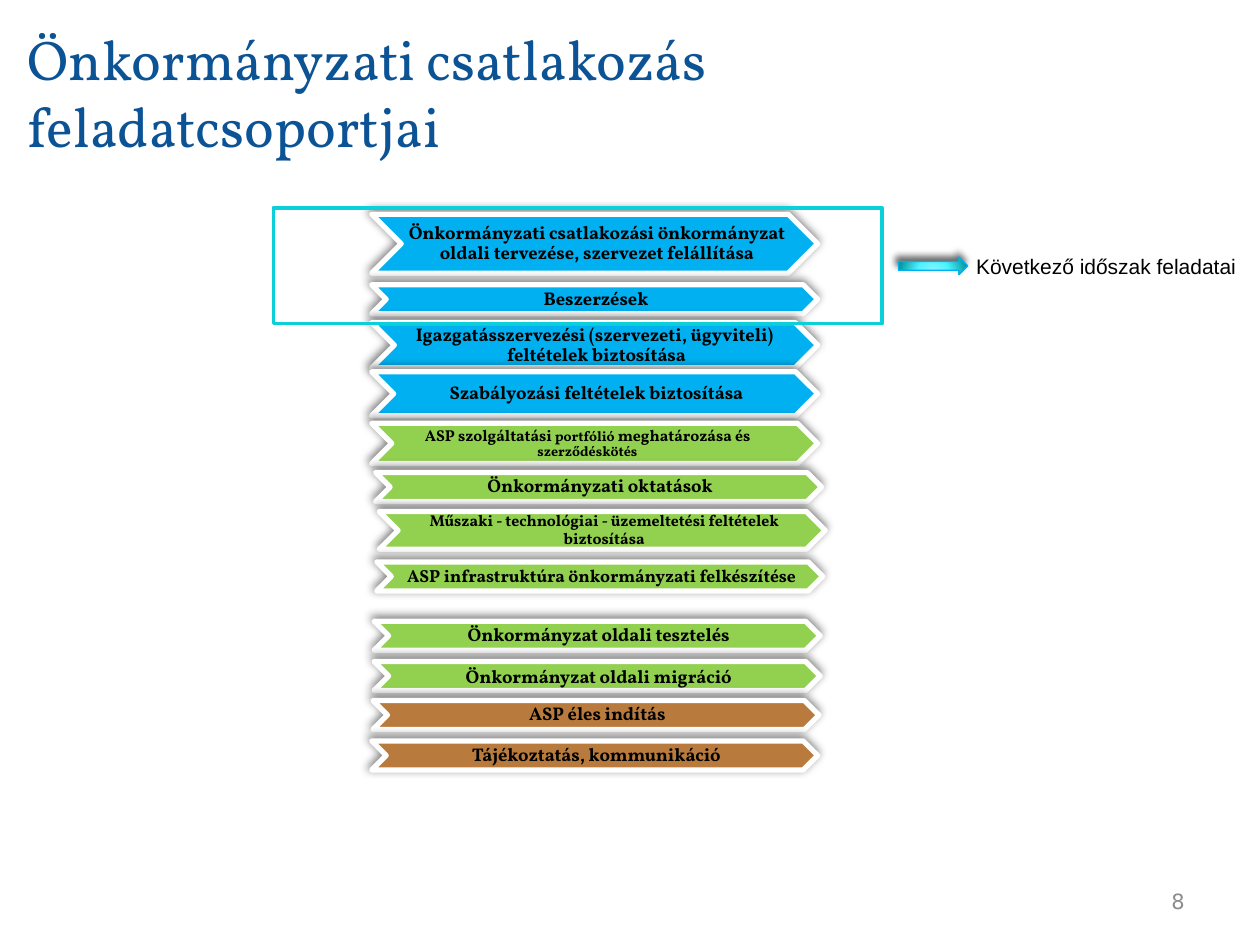
from dataclasses import dataclass

from lxml.etree import SubElement
from pptx import Presentation
from pptx.dml.color import RGBColor
from pptx.enum.shapes import MSO_SHAPE
from pptx.enum.text import MSO_ANCHOR, MSO_AUTO_SIZE, PP_ALIGN
from pptx.oxml import parse_xml
from pptx.oxml.ns import nsdecls, qn
from pptx.util import Pt

BLACK = RGBColor(0x00, 0x00, 0x00)
WHITE = RGBColor(0xFF, 0xFF, 0xFF)
GREY = RGBColor(0x8C, 0x8C, 0x8C)
NAVY = RGBColor(0x0B, 0x53, 0x94)
BLUE = RGBColor(0x00, 0xB0, 0xF0)
GREEN = RGBColor(0x92, 0xD0, 0x50)
BROWN = RGBColor(0xB9, 0x7B, 0x3D)
TURQUOISE = RGBColor(0x0B, 0xD0, 0xD9)

SERIF = "Vollkorn"
CHEVRON_WIDTH = 254.9
ARROW_STOPS = ((0, "99F4FC"), (46, "4DF3FF"), (100, "009299"))


@dataclass
class Task:
    """One chevron; runs pair a text with its size, indent and drop shift its label."""
    left: float
    top: float
    height: float
    color: RGBColor
    runs: list[tuple[str, float]]
    indent: float = 10
    label_width: float = 235.4
    drop: float = 0


TASKS = [
    Task(212.4, 122.4, 33.8, BLUE,
         [("Önkormányzati csatlakozási önkormányzat oldali tervezése, "
           "szervezet felállítása", 10.5)], 15.8, 224.6),
    Task(212.4, 162.7, 16.6, BLUE, [("Beszerzések", 10.5)], 9.4, 236.2),
    Task(212.4, 184.3, 25.9, BLUE,
         [("Igazgatásszervezési (szervezeti, ügyviteli) \n"
           "feltételek biztosítása", 10.5)], 15.1, 225.4),
    Task(212.4, 212.4, 25.2, BLUE,
         [("Szabályozási feltételek biztosítása", 10.5)], 15.1, 225.4),
    Task(212.4, 241.9, 23, GREEN,
         [("ASP szolgáltatási ", 9), ("portfólió", 8),
          (" meghatározása és ", 9), ("szerződéskötés", 8)], 5),
    Task(214.6, 270, 16.6, GREEN, [("Önkormányzati oktatások", 10.5)]),
    Task(216.7, 292.3, 21.6, GREEN,
         [("Műszaki - technológiai - üzemeltetési feltételek biztosítása", 9)],
         13, 229.7),
    Task(215.3, 321.1, 16.6, GREEN,
         [("ASP infrastruktúra önkormányzati felkészítése", 10)]),
    Task(213.8, 355, 16.6, GREEN, [("Önkormányzat oldali tesztelés", 10.5)]),
    Task(213.8, 378, 16.6, GREEN, [("Önkormányzat oldali migráció", 10.5)], drop=0.7),
    Task(213.1, 400.3, 16.6, BROWN, [("ASP éles indítás", 10.5)]),
    Task(212.4, 423.4, 16.6, BROWN, [("Tájékoztatás, kommunikáció", 10.5)]),
]


def add_run(p, text: str, font: str, size: float, color: RGBColor, bold: bool = False):
    for i, line in enumerate(text.split("\n")):
        if i:
            p.add_line_break()
        r = p.add_run()
        r.text = line
        r.font.name, r.font.size, r.font.bold = font, Pt(size), bold
        r.font.color.rgb = color


def add_textbox(shapes, left: float, top: float, width: float, height: float,
                align: PP_ALIGN, anchor: MSO_ANCHOR = MSO_ANCHOR.MIDDLE):
    tf = shapes.add_textbox(Pt(left), Pt(top), Pt(width), Pt(height)).text_frame
    tf.word_wrap = True
    tf.vertical_anchor = anchor
    tf.paragraphs[0].alignment = align
    return tf


def add_outlined(shapes, kind: MSO_SHAPE, left: float, top: float, width: float,
                 height: float, color: RGBColor, weight: float):
    sp = shapes.add_shape(kind, Pt(left), Pt(top), Pt(width), Pt(height))
    sp.shadow.inherit = False
    sp.line.color.rgb = color
    sp.line.width = Pt(weight)
    return sp


def cast_shadow(sp, opacity: int, blur: float, distance: float):
    effects = sp._element.spPr.find(qn("a:effectLst"))
    shadow = SubElement(effects, qn("a:outerShdw"), blurRad=str(Pt(blur)),
                        dist=str(Pt(distance)), dir=str(245 * 60000),
                        algn="ctr", rotWithShape="0")
    color = SubElement(shadow, qn("a:srgbClr"), val=str(BLACK))
    SubElement(color, qn("a:alpha"), val=str(opacity * 1000))


def fill_radial(sp, stops: tuple):
    stop_xml = "".join(f'<a:gs pos="{pos * 1000}"><a:srgbClr val="{color}"/></a:gs>'
                       for pos, color in stops)
    gradient = parse_xml(
        f'<a:gradFill {nsdecls("a")} rotWithShape="1"><a:gsLst>{stop_xml}</a:gsLst>'
        '<a:path path="circle"><a:fillToRect l="50000" t="155000" r="50000" b="-55000"/>'
        '</a:path></a:gradFill>')
    sp._element.spPr.find(qn("a:prstGeom")).addnext(gradient)


def draw_task(s, task: Task):
    shapes = s.shapes.add_group_shape().shapes
    sp = add_outlined(shapes, MSO_SHAPE.CHEVRON, task.left, task.top,
                      CHEVRON_WIDTH, task.height, WHITE, 3)
    sp.fill.solid()
    sp.fill.fore_color.rgb = task.color
    cast_shadow(sp, 50, 5, 2)

    tf = add_textbox(shapes, task.left + task.indent, task.top + task.drop,
                     task.label_width, task.height, PP_ALIGN.CENTER)
    tf.margin_left, tf.margin_right = Pt(1.4), 0
    tf.margin_top = tf.margin_bottom = Pt(0.7)
    p = tf.paragraphs[0]
    p.line_spacing = 0.9
    p.space_after = Pt(3.7)
    for text, size in task.runs:
        add_run(p, text, SERIF, size, BLACK, bold=True)


def draw_title(s, text: str):
    title = s.shapes.title
    title.left, title.top, title.width, title.height = Pt(8.6), Pt(5), Pt(439.2), Pt(95)
    tf = title.text_frame
    tf.auto_size = MSO_AUTO_SIZE.NONE
    tf.vertical_anchor = MSO_ANCHOR.MIDDLE
    p = tf.paragraphs[0]
    p.alignment = PP_ALIGN.LEFT
    add_run(p, text, SERIF, 32, NAVY)


def draw_next_period(s):
    frame = add_outlined(s.shapes, MSO_SHAPE.RECTANGLE, 156.2, 118.8, 347.8, 66.2,
                         TURQUOISE, 2)
    frame.fill.background()
    arrow = add_outlined(s.shapes, MSO_SHAPE.RIGHT_ARROW, 513.4, 146.9, 39.6, 10.1,
                         BLUE, 0.75)
    fill_radial(arrow, ARROW_STOPS)
    cast_shadow(arrow, 60, 4, 3)
    tf = add_textbox(s.shapes, 544.3, 141.1, 175.7, 21.6, PP_ALIGN.CENTER, MSO_ANCHOR.TOP)
    tf.auto_size = MSO_AUTO_SIZE.SHAPE_TO_FIT_TEXT
    add_run(tf.paragraphs[0], "Következő időszak feladatai", "Arial", 12, BLACK)


def main():
    prs = Presentation()
    prs.slide_width, prs.slide_height = Pt(720), Pt(540)
    s = prs.slides.add_slide(prs.slide_layouts[5])
    draw_title(s, "Önkormányzati csatlakozás feladatcsoportjai")
    for task in TASKS:
        draw_task(s, task)
    draw_next_period(s)
    number = add_textbox(s.shapes, 516.2, 500.4, 167.8, 28.8, PP_ALIGN.RIGHT)
    add_run(number.paragraphs[0], "8", "DejaVu Sans", 12, GREY)
    prs.save("out.pptx")


if __name__ == "__main__":
    main()
